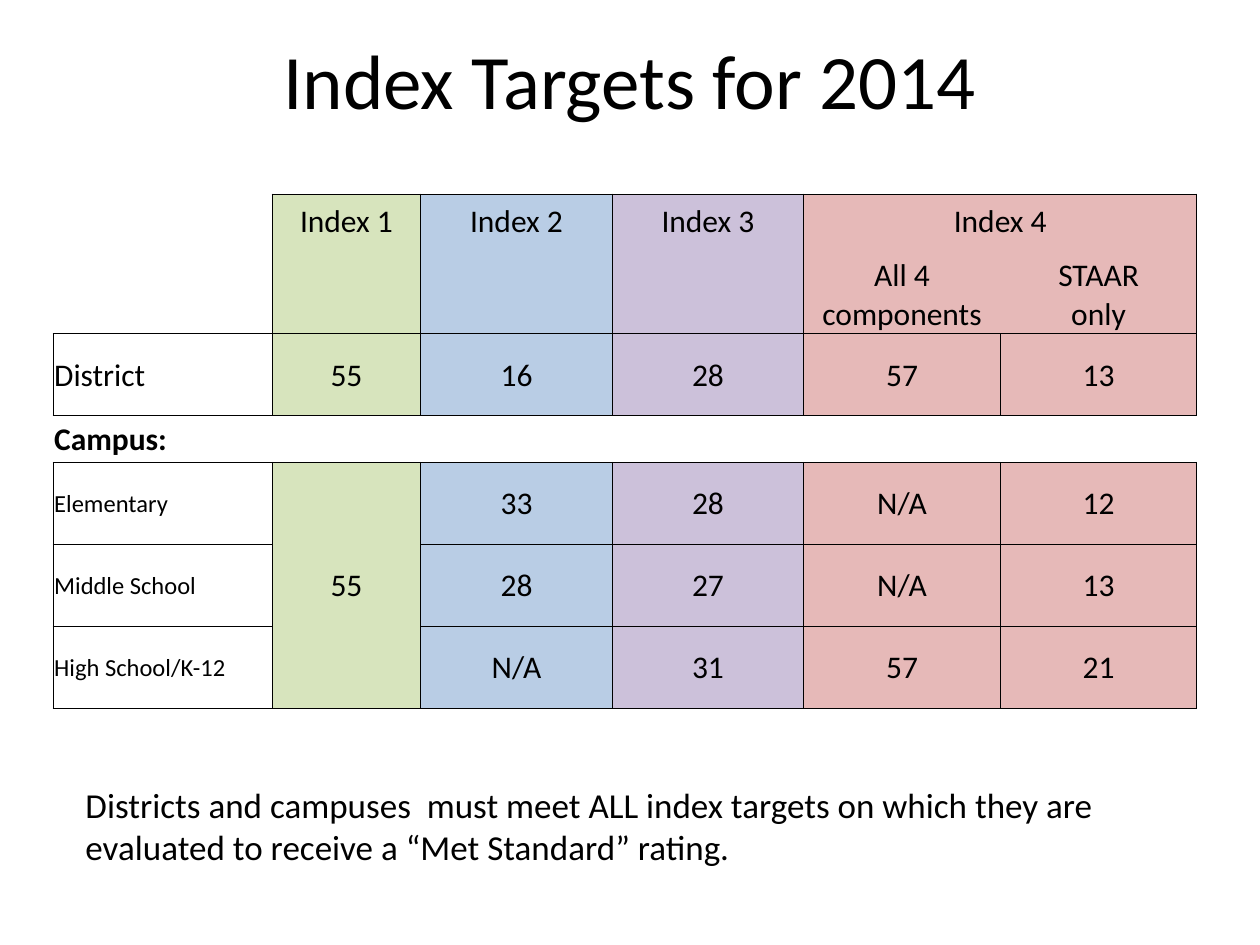
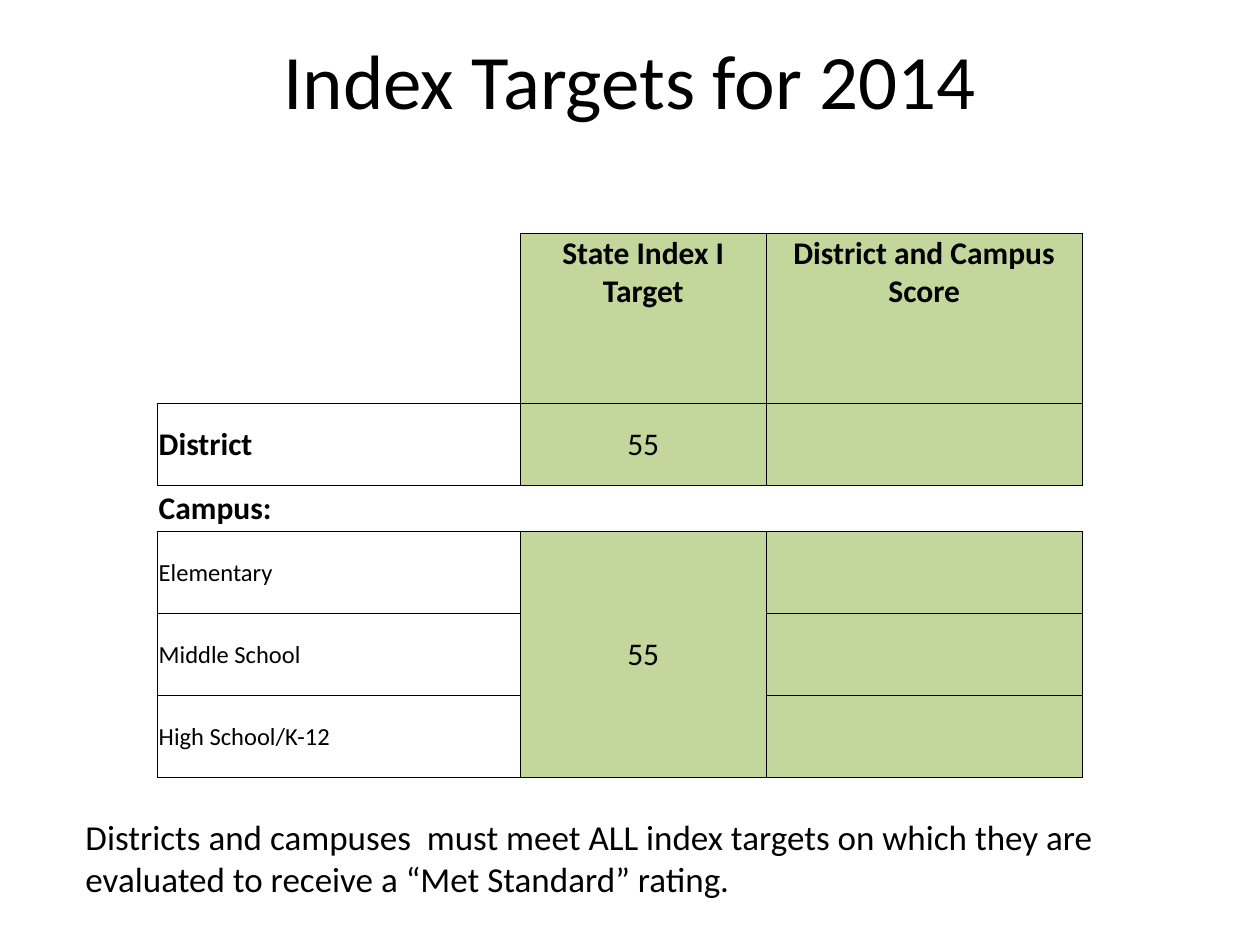
from dataclasses import dataclass

from lxml import etree
from pptx import Presentation
from pptx.dml.color import RGBColor
from pptx.enum.text import MSO_ANCHOR, PP_ALIGN
from pptx.oxml.ns import qn
from pptx.util import Pt

LEFT, CENTER = PP_ALIGN.LEFT, PP_ALIGN.CENTER
TOP, MIDDLE, BOTTOM = MSO_ANCHOR.TOP, MSO_ANCHOR.MIDDLE, MSO_ANCHOR.BOTTOM
EMU_PER_PX = 9144  # 100 px to the inch


@dataclass(frozen=True)
class Theme:
    font: str = "Calibri"
    ink: str = "000000"
    green: str = "D7E4BD"
    blue: str = "B9CDE5"
    purple: str = "CCC1DA"
    rose: str = "E6B9B8"
    score_green: str = "C3D69B"
    title_pt: int = 44
    note_pt: int = 20
    cell_pt: int = 18
    school_pt: int = 14
    border_pt: float = 0.5


THEME = Theme()

TITLE = "Index Targets for 2014"
NOTE = ("Districts and campuses  must meet ALL index targets on which they are "
        "evaluated to receive a “Met Standard” rating.")

# Rows of every target table
HEAD, SUBHEAD, DISTRICT, CAMPUS = 2, 3, 4, 5
SCHOOLS = {6: "Elementary", 7: "Middle School", 8: "High School/K-12"}
FIRST_SCHOOL, LAST_SCHOOL = min(SCHOOLS), max(SCHOOLS)
ROW_HEIGHTS = [66, 46, 37, 74, 65, 37, 65, 65, 65, 37]

# Side: row step and column step to the neighbour, and the side it shares
NEIGHBOURS = {"L": (0, -1, "R"), "R": (0, 1, "L"),
              "T": (-1, 0, "B"), "B": (1, 0, "T")}


@dataclass(frozen=True)
class TargetTable:
    """Content and layout of one table; joined_head is a pair of columns."""
    left: int
    top: int
    widths: list
    fills: list
    texts: dict
    head_height: int
    bold_labels: bool = False
    joined_head: tuple = ()
    merges: tuple = ()


INDEX_TARGETS = TargetTable(
    left=42, top=42,
    widths=[174, 118, 152, 152, 156, 156],
    fills=[THEME.green, THEME.blue, THEME.purple, THEME.rose, THEME.rose],
    texts={
        HEAD: ["Index 1", "Index 2", "Index 3", "Index 4", ""],
        SUBHEAD: ["", "", "", "All 4 components", "STAAR\nonly"],
        DISTRICT: ["55", "16", "28", "57", "13"],
        6: ["55", "33", "28", "N/A", "12"],
        7: ["", "28", "27", "N/A", "13"],
        8: ["", "N/A", "31", "57", "21"],
    },
    head_height=37,
    joined_head=(4, 5),
    merges=((HEAD, 4, HEAD, 5), (9, 2, 9, 4)),
)

INDEX_1_SCORES = TargetTable(
    left=125, top=73,
    widths=[288, 195, 251],
    fills=[THEME.score_green] * 2,
    texts={
        HEAD: ["State Index I Target", "District and Campus Score"],
        DISTRICT: ["55", ""],
        6: ["55", ""],
    },
    head_height=61,
    bold_labels=True,
)


def px(length):
    return length * EMU_PER_PX


def write(frame, text, size, align=LEFT, bold=False):
    for number, line in enumerate(text.split("\n")):
        paragraph = frame.add_paragraph() if number else frame.paragraphs[0]
        paragraph.alignment = align
        run = paragraph.add_run()
        run.text = line
        run.font.name = THEME.font
        run.font.size = Pt(size)
        run.font.bold = bold
        run.font.color.rgb = RGBColor.from_string(THEME.ink)


def add_text(slide, box, text, size, align=LEFT, anchor=TOP):
    frame = slide.shapes.add_textbox(*map(px, box)).text_frame
    frame.word_wrap = True
    frame.vertical_anchor = anchor
    write(frame, text, size, align)


def own_sides(spec, row, col):
    """Sides that the cell itself asks to have ruled."""
    if row == DISTRICT or row in SCHOOLS:
        return "LRTB" if 0 <= col < len(spec.widths) else ""
    if not 0 < col < len(spec.widths):
        return ""
    if row == HEAD:
        return "LRT"
    if row == SUBHEAD:
        if col in spec.joined_head:
            return "LB" if col == spec.joined_head[0] else "RB"
        return "LRB"
    return ""


def rule_cell(cell, spec, row, col):
    """Draw each side that the cell or its neighbour asks for."""
    properties = cell._tc.get_or_add_tcPr()
    for place, (side, (down, across, shared)) in enumerate(NEIGHBOURS.items()):
        ruled = (side in own_sides(spec, row, col)
                 or shared in own_sides(spec, row + down, col + across))
        line = etree.Element(qn(f"a:ln{side}"), w=str(Pt(THEME.border_pt)))
        if ruled:
            fill = etree.SubElement(line, qn("a:solidFill"))
            etree.SubElement(fill, qn("a:srgbClr"), val=THEME.ink)
        else:
            etree.SubElement(line, qn("a:noFill"))
        properties.insert(place, line)


def fill_cell(cell, spec, row, col):
    if col and (row in (HEAD, SUBHEAD, DISTRICT) or row in SCHOOLS):
        cell.fill.solid()
        cell.fill.fore_color.rgb = RGBColor.from_string(spec.fills[col - 1])
    else:
        cell.fill.background()


def cell_text(spec, row, col):
    if col:
        return spec.texts[row][col - 1] if row in spec.texts else ""
    labels = {DISTRICT: "District", CAMPUS: "Campus:", **SCHOOLS}
    return labels.get(row, "")


def add_target_table(slide, spec):
    heights = list(ROW_HEIGHTS)
    heights[HEAD] = spec.head_height
    last_col = len(spec.widths) - 1
    box = (spec.left, spec.top, sum(spec.widths), sum(heights))
    table = slide.shapes.add_table(len(heights), len(spec.widths),
                                   *map(px, box)).table
    table.first_row = table.horz_banding = False
    for column, width in zip(table.columns, spec.widths):
        column.width = px(width)
    for row, height in enumerate(heights):
        table.rows[row].height = px(height)
        for col in range(len(spec.widths)):
            cell = table.cell(row, col)
            cell.margin_left = cell.margin_right = cell.margin_top = px(1)
            cell.margin_bottom = 0
            cell.vertical_anchor = BOTTOM if row in (HEAD, SUBHEAD) else MIDDLE
            text = cell_text(spec, row, col)
            if text:
                is_school = col == 0 and row in SCHOOLS
                is_label = row == HEAD or (row == DISTRICT and col == 0)
                write(cell.text_frame, text,
                      THEME.school_pt if is_school else THEME.cell_pt,
                      CENTER if col else LEFT,
                      row == CAMPUS or (is_label and spec.bold_labels))
            fill_cell(cell, spec, row, col)
            rule_cell(cell, spec, row, col)
    shared_merges = ((0, 0, 0, last_col), (FIRST_SCHOOL, 1, LAST_SCHOOL, 1))
    for top, left, bottom, right in shared_merges + spec.merges:
        table.cell(top, left).merge(table.cell(bottom, right))


def add_target_slide(deck, spec, note_top):
    slide = deck.slides.add_slide(deck.slide_layouts[6])
    add_text(slide, (50, 0, 900, 125), TITLE, THEME.title_pt, CENTER, MIDDLE)
    add_target_table(slide, spec)
    add_text(slide, (58, note_top, 858, 77), NOTE, THEME.note_pt)


def main():
    deck = Presentation()
    deck.slide_width, deck.slide_height = px(1000), px(750)
    add_target_slide(deck, INDEX_TARGETS, note_top=617)
    add_target_slide(deck, INDEX_1_SCORES, note_top=642)
    deck.save("out.pptx")


if __name__ == "__main__":
    main()
